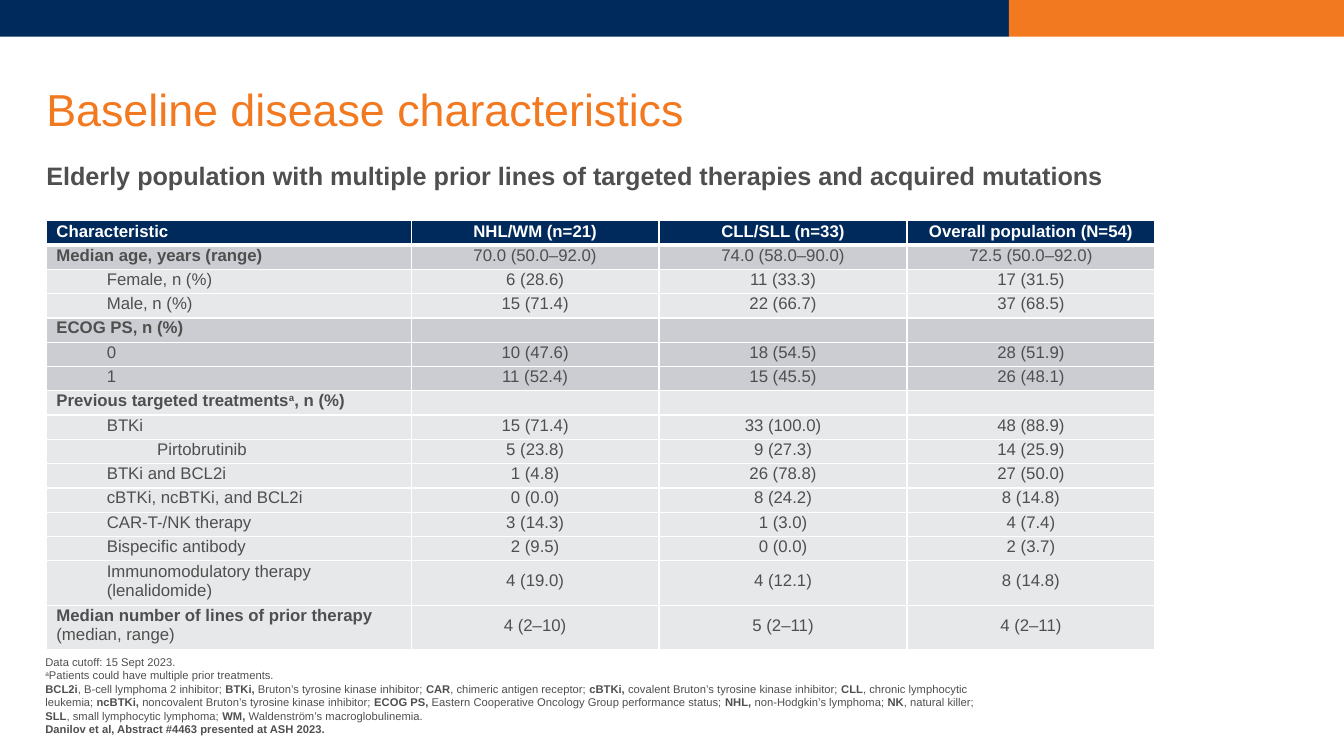
import pptx
import pptx.util
import pptx.dml.color
import pptx.enum.shapes
import pptx.enum.text
import pptx.oxml.ns
import lxml.etree

Pt = pptx.util.Pt
ALIGN = pptx.enum.text.PP_ALIGN
ANCHOR = pptx.enum.text.MSO_ANCHOR

THEME = {
    "font": "Arial",
    "navy": "002A5C", "orange": "F37920", "text": "4E4F4E", "white": "FFFFFF",
    "dark band": "CBCDD2", "light band": "E7E8EA",
    "title": 32, "subtitle": 18, "table": 12, "notes": 8,
}

TITLE = "Baseline disease characteristics"
SUBTITLE = "Elderly population with multiple prior lines of targeted therapies and acquired mutations"

HEADERS = ["Characteristic", "NHL/WM (n=21)", "CLL/SLL (n=33)", "Overall population (N=54)"]

ROWS = [
    ("dark band", 0, [("Median age, years (range)", "bold")],
     ["70.0 (50.0–92.0)", "74.0 (58.0–90.0)", "72.5 (50.0–92.0)"]),
    ("light band", 1, [("Female, n (%)", "")], ["6 (28.6)", "11 (33.3)", "17 (31.5)"]),
    ("light band", 1, [("Male, n (%)", "")], ["15 (71.4)", "22 (66.7)", "37 (68.5)"]),
    ("dark band", 0, [("ECOG PS, n (%)", "bold")], ["", "", ""]),
    ("dark band", 1, [("0", "")], ["10 (47.6)", "18 (54.5)", "28 (51.9)"]),
    ("dark band", 1, [("1", "")], ["11 (52.4)", "15 (45.5)", "26 (48.1)"]),
    ("light band", 0, [("Previous targeted treatments", "bold"), ("a", "bold super"), (", n (%)", "bold")],
     ["", "", ""]),
    ("light band", 1, [("BTKi", "")], ["15 (71.4)", "33 (100.0)", "48 (88.9)"]),
    ("light band", 2, [("Pirtobrutinib", "")], ["5 (23.8)", "9 (27.3)", "14 (25.9)"]),
    ("light band", 1, [("BTKi and BCL2i", "")], ["1 (4.8)", "26 (78.8)", "27 (50.0)"]),
    ("light band", 1, [("cBTKi, ncBTKi, and BCL2i", "")], ["0 (0.0)", "8 (24.2)", "8 (14.8)"]),
    ("light band", 1, [("CAR-T-/NK therapy", "")], ["3 (14.3)", "1 (3.0)", "4 (7.4)"]),
    ("light band", 1, [("Bispecific antibody", "")], ["2 (9.5)", "0 (0.0)", "2 (3.7)"]),
    ("light band", 1, [("Immunomodulatory therapy (lenalidomide)", "")], ["4 (19.0)", "4 (12.1)", "8 (14.8)"]),
    ("light band", 0, [("Median number of lines of prior therapy ", "bold"), ("(median, range)", "")],
     ["4 (2–10)", "5 (2–11)", "4 (2–11)"]),
]
TALL_ROWS = 2

ABBREVIATIONS = [
    ("BCL2i", ", B-cell lymphoma 2 inhibitor; "),
    ("BTKi, ", "Bruton’s tyrosine kinase inhibitor; "),
    ("CAR", ", chimeric antigen receptor; "),
    ("cBTKi, ", "covalent Bruton’s tyrosine kinase inhibitor; "),
    ("CLL", ", chronic lymphocytic leukemia; "),
    ("ncBTKi, ", "noncovalent Bruton’s tyrosine kinase inhibitor; "),
    ("ECOG PS, ", "Eastern Cooperative Oncology Group performance status; "),
    ("NHL,", " non-Hodgkin’s lymphoma; "),
    ("NK", ", natural killer; "),
    ("SLL", ", small lymphocytic lymphoma; "),
    ("WM, ", "Waldenström’s macroglobulinemia."),
]
NOTES = [
    [("Data cutoff: 15 Sept 2023.", "")],
    [("a", "super"), ("Patients could have multiple prior treatments.", "")],
    [run for short, full in ABBREVIATIONS for run in ((short, "bold"), (full, ""))],
    [("Danilov et al, Abstract #4463 presented at ASH 2023.", "bold")],
]

SLIDE_WIDTH, SLIDE_HEIGHT = 960, 540
BAR_HEIGHT, BAR_SPLIT = 26.2, 720.7
LEFT, CONTENT_WIDTH = 33.1, 895
TABLE_TOP = 157.7
COLUMN_WIDTHS = [260.6, 177.1, 177.1, 177.1]
ROW_HEIGHT, TALL_HEIGHT = 17.35, 31.8
INDENT = 36


def color(name):
    return pptx.dml.color.RGBColor.from_string(THEME[name])


def write_runs(paragraph, runs, size, color_name):
    for text, style in runs:
        run = paragraph.add_run()
        run.text = text
        run.font.name = THEME["font"]
        run.font.size = Pt(THEME[size])
        run.font.bold = "bold" in style
        run.font.color.rgb = color(color_name)
        if "super" in style:
            run._r.get_or_add_rPr().set("baseline", "30000")


def add_bar(slide, left, width, color_name):
    bar = slide.shapes.add_shape(pptx.enum.shapes.MSO_SHAPE.RECTANGLE,
                                 Pt(left), Pt(0), Pt(width), Pt(BAR_HEIGHT))
    bar.shadow.inherit = False
    bar.fill.solid()
    bar.fill.fore_color.rgb = color(color_name)
    bar.line.fill.background()


def add_text(slide, box, paragraphs, size, color_name, anchor, spacing):
    frame = slide.shapes.add_textbox(*[Pt(length) for length in box]).text_frame
    frame.word_wrap = True
    frame.vertical_anchor = anchor
    frame.margin_left = frame.margin_right = frame.margin_top = frame.margin_bottom = 0
    for index, runs in enumerate(paragraphs):
        paragraph = frame.add_paragraph() if index else frame.paragraphs[0]
        paragraph.line_spacing = spacing
        write_runs(paragraph, runs, size, color_name)


def add_borders(cell, bottom_width):
    properties = cell._tc.get_or_add_tcPr()
    qn = pptx.oxml.ns.qn
    for side, width in (("L", 1), ("R", 1), ("T", 1), ("B", bottom_width)):
        line = lxml.etree.SubElement(properties, qn("a:ln" + side), w=str(Pt(width)))
        fill = lxml.etree.SubElement(line, qn("a:solidFill"))
        lxml.etree.SubElement(fill, qn("a:srgbClr"), val=THEME["white"])


def fill_cell(cell, runs, band, color_name, anchor, bottom_width, centered, level):
    add_borders(cell, bottom_width)
    cell.fill.solid()
    cell.fill.fore_color.rgb = color(band)
    cell.vertical_anchor = anchor
    cell.margin_left = cell.margin_right = Pt(7.2)
    cell.margin_top, cell.margin_bottom = Pt(0), Pt(2.9)
    paragraph = cell.text_frame.paragraphs[0]
    if centered:
        paragraph.alignment = ALIGN.CENTER
    if level:
        paragraph.level = level
        paragraph._p.get_or_add_pPr().set("marL", str(Pt(INDENT * level)))
    if runs:
        write_runs(paragraph, runs, "table", color_name)
    else:
        lxml.etree.SubElement(paragraph._p, pptx.oxml.ns.qn("a:endParaRPr"), sz=str(THEME["table"] * 100))


def add_characteristics_table(slide):
    heights = [ROW_HEIGHT] * (len(ROWS) + 1 - TALL_ROWS) + [TALL_HEIGHT] * TALL_ROWS
    table = slide.shapes.add_table(len(heights), len(HEADERS), Pt(LEFT), Pt(TABLE_TOP),
                                   Pt(sum(COLUMN_WIDTHS)), Pt(sum(heights))).table
    for column, width in zip(table.columns, COLUMN_WIDTHS):
        column.width = Pt(width)
    for row, height in zip(table.rows, heights):
        row.height = Pt(height)
    for column, header in enumerate(HEADERS):
        fill_cell(table.cell(0, column), [(header, "bold")], "navy", "white",
                  ANCHOR.BOTTOM, 3, column > 0, 0)
    for row, (band, level, label, values) in enumerate(ROWS, 1):
        contents = [label] + [[(value, "")] if value else [] for value in values]
        for column, runs in enumerate(contents):
            fill_cell(table.cell(row, column), runs, band, "text", ANCHOR.MIDDLE, 1,
                      column > 0, 0 if column else level)


def main():
    presentation = pptx.Presentation()
    presentation.slide_width, presentation.slide_height = Pt(SLIDE_WIDTH), Pt(SLIDE_HEIGHT)
    slide = presentation.slides.add_slide(presentation.slide_layouts[6])
    add_bar(slide, 0, BAR_SPLIT, "navy")
    add_bar(slide, BAR_SPLIT, SLIDE_WIDTH - BAR_SPLIT, "orange")
    add_text(slide, (LEFT, 100.8, CONTENT_WIDTH, 51.1), [[(SUBTITLE, "bold")]],
             "subtitle", "text", ANCHOR.MIDDLE, 0.9)
    add_text(slide, (LEFT, 45.4, CONTENT_WIDTH, 51.8), [[(TITLE, "")]],
             "title", "orange", ANCHOR.BOTTOM, 0.9)
    add_text(slide, (32.4, 474.5, 671.8, 51.1), NOTES, "notes", "text", ANCHOR.BOTTOM, 1.0)
    add_characteristics_table(slide)
    presentation.save("out.pptx")


if __name__ == "__main__":
    main()
